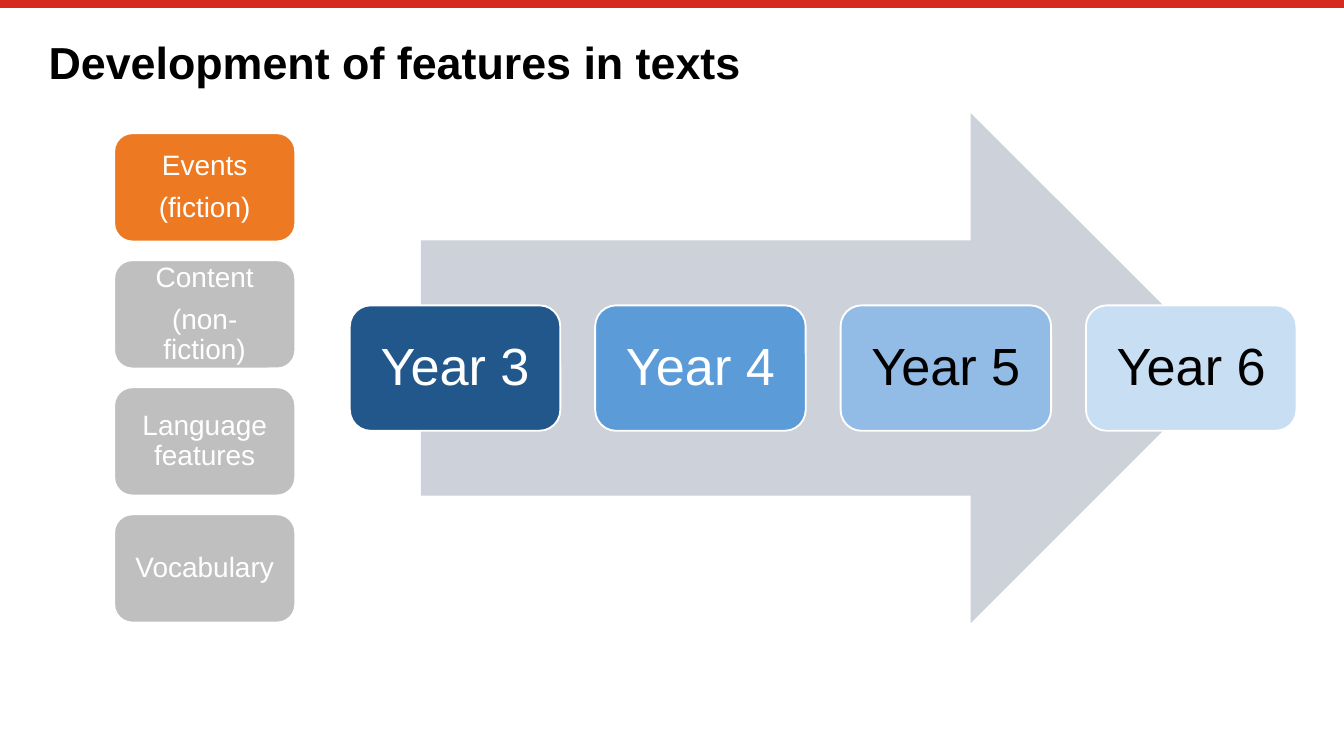
from dataclasses import dataclass

from lxml.etree import SubElement
from pptx import Presentation
from pptx.dml.color import RGBColor
from pptx.enum.shapes import MSO_CONNECTOR, MSO_SHAPE
from pptx.enum.text import MSO_ANCHOR, MSO_AUTO_SIZE, PP_ALIGN
from pptx.oxml.ns import qn
from pptx.util import Pt


@dataclass(frozen=True)
class Theme:
    font: str = "Arial"
    title_size: int = 24
    year_size: int = 28
    feature_size: int = 15
    black: str = "000000"
    white: str = "FFFFFF"
    rule: str = "D52B1E"
    arrow: str = "CDD1DA"
    active: str = "ED7A23"
    inactive: str = "BFBFBF"
    years: tuple = ("21578A", "5B9BD8", "92BCE5", "C8DEF2")


class Deck:
    def __init__(self, prs, theme):
        self.theme = theme
        self.slide = prs.slides.add_slide(prs.slide_layouts[5])

    def _write(self, sp, lines, size, color, align, anchor, inset, bold=False):
        tf = sp.text_frame
        tf.word_wrap = True
        tf.auto_size = MSO_AUTO_SIZE.NONE
        tf.vertical_anchor = anchor
        tf.margin_left = tf.margin_right = Pt(inset)
        tf.margin_top = tf.margin_bottom = Pt(inset)
        for i, line in enumerate(lines):
            p = tf.paragraphs[0] if i == 0 else tf.add_paragraph()
            p.text = line
            p.alignment = align
            p.line_spacing = 0.9
            p.space_before = Pt(0)
            p.space_after = Pt(0.4 * size if i < len(lines) - 1 else 0)
            p.font.name = self.theme.font
            p.font.size = Pt(size)
            p.font.bold = bold
            p.font.color.rgb = RGBColor.from_string(color)

    def _shape(self, kind, x, y, w, h, fill):
        sp = self.slide.shapes.add_shape(kind, Pt(x), Pt(y), Pt(w), Pt(h))
        sp.shadow.inherit = False
        sp.fill.solid()
        sp.fill.fore_color.rgb = RGBColor.from_string(fill)
        return sp

    def title(self, text, x, y, w, h):
        sp = self.slide.shapes.title
        sp.left, sp.top, sp.width, sp.height = Pt(x), Pt(y), Pt(w), Pt(h)
        self._write(sp, [text], self.theme.title_size, self.theme.black,
                    PP_ALIGN.LEFT, MSO_ANCHOR.TOP, 0, bold=True)

    def rule(self, x1, x2, y, weight):
        line = self.slide.shapes.add_connector(
            MSO_CONNECTOR.STRAIGHT, Pt(x1), Pt(y), Pt(x2), Pt(y))
        line.line.width = Pt(weight)
        line.line.color.rgb = RGBColor.from_string(self.theme.rule)
        SubElement(line._element.spPr, qn("a:effectLst"))

    def arrow(self, x, y, w, h):
        sp = self._shape(MSO_SHAPE.RIGHT_ARROW, x, y, w, h, self.theme.arrow)
        sp.line.fill.background()

    def card(self, lines, x, y, w, h, fill, size, color, inset):
        sp = self._shape(MSO_SHAPE.ROUNDED_RECTANGLE, x, y, w, h, fill)
        sp.line.color.rgb = RGBColor.from_string(self.theme.white)
        sp.line.width = Pt(1)
        self._write(sp, lines, size, color,
                    PP_ALIGN.CENTER, MSO_ANCHOR.MIDDLE, inset)


def main():
    prs = Presentation()
    prs.slide_width, prs.slide_height = Pt(720), Pt(405)
    theme = Theme()
    deck = Deck(prs, theme)

    deck.rule(0, 720, 2.1, 4.2)
    deck.title("Development of features in texts", 26, 21.6, 669, 28)
    deck.arrow(225.4, 60.5, 431.3, 273.4)

    for i, fill in enumerate(theme.years):
        color = theme.white if i < 2 else theme.black
        deck.card([f"Year {i + 3}"], 187.4 + 131.45 * i, 163.6, 112.8, 67.2,
                  fill, theme.year_size, color, 11.8)

    features = (["Events", "(fiction)"], ["Content", "(non-fiction)"],
                ["Language features"], ["Vocabulary"])
    for i, lines in enumerate(features):
        fill = theme.active if i == 0 else theme.inactive
        deck.card(lines, 61.2, 71.4 + 68.05 * i, 97, 58,
                  fill, theme.feature_size, theme.white, 7.2)

    prs.save("out.pptx")


if __name__ == "__main__":
    main()
